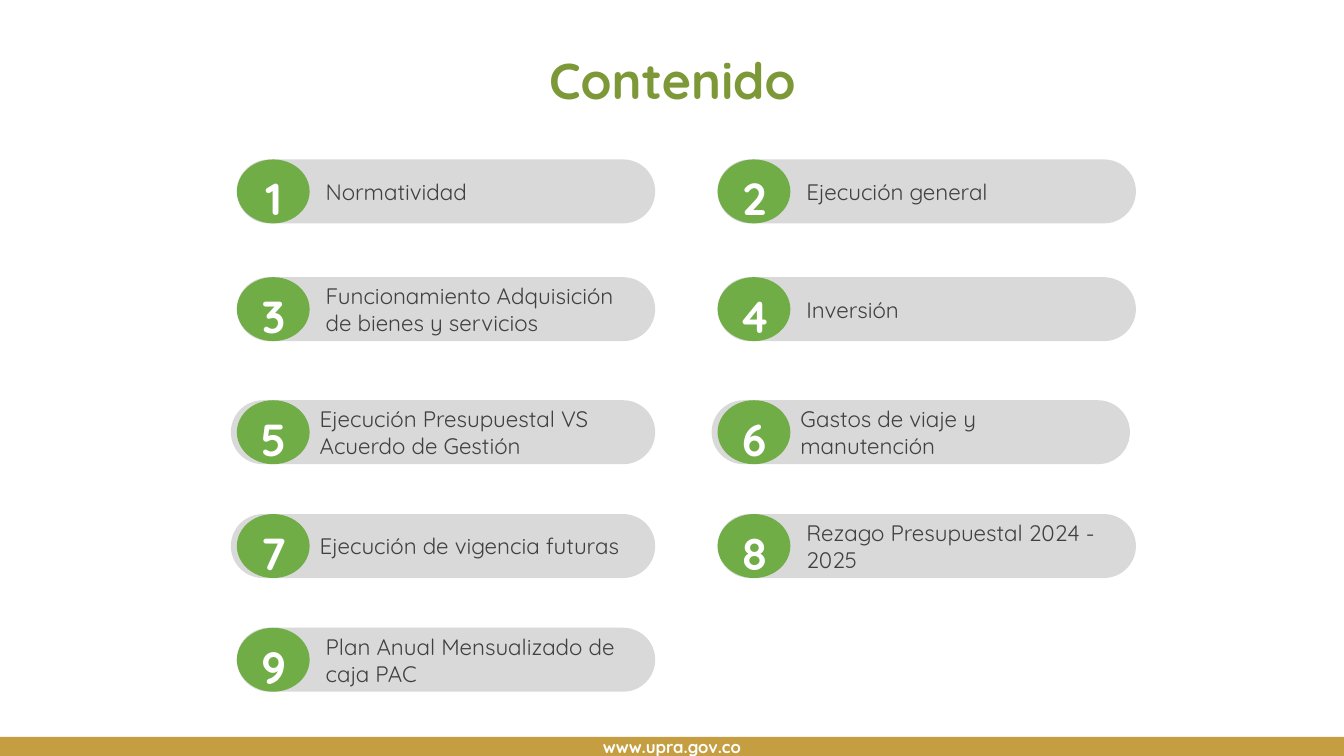
from dataclasses import dataclass

from pptx import Presentation
from pptx.dml.color import RGBColor
from pptx.enum import shapes, text
from pptx.util import Pt

FONT = "Quicksand"
GREEN, GRAY, GOLD = "70AD47", "D9D9D9", "C59E41"
COLUMN_LEFTS = (169.2, 512.6)
ROW_TOPS = (113.9, 198, 285.9, 367.2, 448.4)
BAR_WIDTH, BAR_HEIGHT, DISC_WIDTH = 298.8, 45.7, 52
OVERHANG = 4.3

TITLE_FORMAT = {"size": Pt(36), "bold": True, "color": "7D9837"}
TOPIC_FORMAT = {"size": Pt(16), "color": "404040"}
NUMBER_FORMAT = {"size": Pt(32), "bold": True, "color": "FFFFFF"}
FOOTER_FORMAT = {"size": Pt(12), "bold": True, "color": "FFFFFF"}


@dataclass
class Topic:
    """An agenda entry; its bar may start left of the disc and be wider."""
    label: str
    bar_shift: float = 0
    bar_extra: float = 0


TOPICS = (
    Topic("Normatividad"),
    Topic("Ejecución general"),
    Topic("Funcionamiento Adquisición de bienes y servicios"),
    Topic("Inversión"),
    Topic("Ejecución Presupuestal VS Acuerdo de Gestión", -OVERHANG, OVERHANG),
    Topic("Gastos de viaje y manutención", -OVERHANG),
    Topic("Ejecución de vigencia futuras", -OVERHANG, OVERHANG),
    Topic("Rezago Presupuestal 2024 - 2025"),
    Topic("Plan Anual Mensualizado de caja PAC"),
)


def rgb(hex_color: str) -> RGBColor:
    return RGBColor.from_string(hex_color)


def write(frame, words: str, font_format: dict, align=text.PP_ALIGN.CENTER) -> None:
    frame.word_wrap = True
    paragraph = frame.paragraphs[0]
    paragraph.alignment = align
    run = paragraph.add_run()
    run.text = words
    run.font.name = FONT
    for name, value in font_format.items():
        if name == "color":
            run.font.color.rgb = rgb(value)
        else:
            setattr(run.font, name, value)


def add_filled(parent, preset, left: float, top: float, width: float,
               height: float, fill: str):
    """Add a preset shape with a plain fill, no outline and no shadow."""
    shape = parent.add_shape(preset, Pt(left), Pt(top), Pt(width), Pt(height))
    shape.shadow.inherit = False
    shape.fill.solid()
    shape.fill.fore_color.rgb = rgb(fill)
    shape.line.fill.background()
    return shape


def add_topic(slide, index: int, topic: Topic) -> None:
    row, column = divmod(index, len(COLUMN_LEFTS))
    left, top = COLUMN_LEFTS[column], ROW_TOPS[row]
    group = slide.shapes.add_group_shape().shapes

    bar = add_filled(group, shapes.MSO_SHAPE.ROUNDED_RECTANGLE, left + topic.bar_shift,
                     top, BAR_WIDTH + topic.bar_extra, BAR_HEIGHT, GRAY)
    bar.adjustments[0] = 0.5
    bar.text_frame.margin_left = Pt(56.7)
    bar.text_frame.vertical_anchor = text.MSO_ANCHOR.MIDDLE
    write(bar.text_frame, topic.label, TOPIC_FORMAT, text.PP_ALIGN.LEFT)

    add_filled(group, shapes.MSO_SHAPE.OVAL, left, top, DISC_WIDTH, BAR_HEIGHT, GREEN)

    number = group.add_textbox(Pt(left - OVERHANG), Pt(top + 4.7), Pt(61.2), Pt(41))
    write(number.text_frame, str(index + 1), NUMBER_FORMAT)
    number.text_frame.auto_size = text.MSO_AUTO_SIZE.SHAPE_TO_FIT_TEXT


def add_title(slide) -> None:
    title = slide.shapes.title
    place = {"left": Pt(151.2), "top": Pt(36.7), "width": Pt(658), "height": Pt(85.7)}
    for name, value in place.items():
        setattr(title, name, value)
    frame = title.text_frame
    frame.vertical_anchor = text.MSO_ANCHOR.TOP
    frame.auto_size = text.MSO_AUTO_SIZE.NONE
    write(frame, "Contenido", TITLE_FORMAT)
    frame.paragraphs[0].line_spacing = 0.9


def add_footer(slide) -> None:
    footer = add_filled(slide.shapes, shapes.MSO_SHAPE.RECTANGLE,
                        0, 526.4, 960, 13.6, GOLD)
    footer.text_frame.vertical_anchor = text.MSO_ANCHOR.MIDDLE
    write(footer.text_frame, "www.upra.gov.co", FOOTER_FORMAT)


def main() -> None:
    deck = Presentation()
    deck.slide_width, deck.slide_height = Pt(960), Pt(540)
    slide = deck.slides.add_slide(deck.slide_layouts.get_by_name("Title Only"))
    add_footer(slide)
    add_title(slide)
    for index, topic in enumerate(TOPICS):
        add_topic(slide, index, topic)
    deck.save("out.pptx")


if __name__ == "__main__":
    main()
